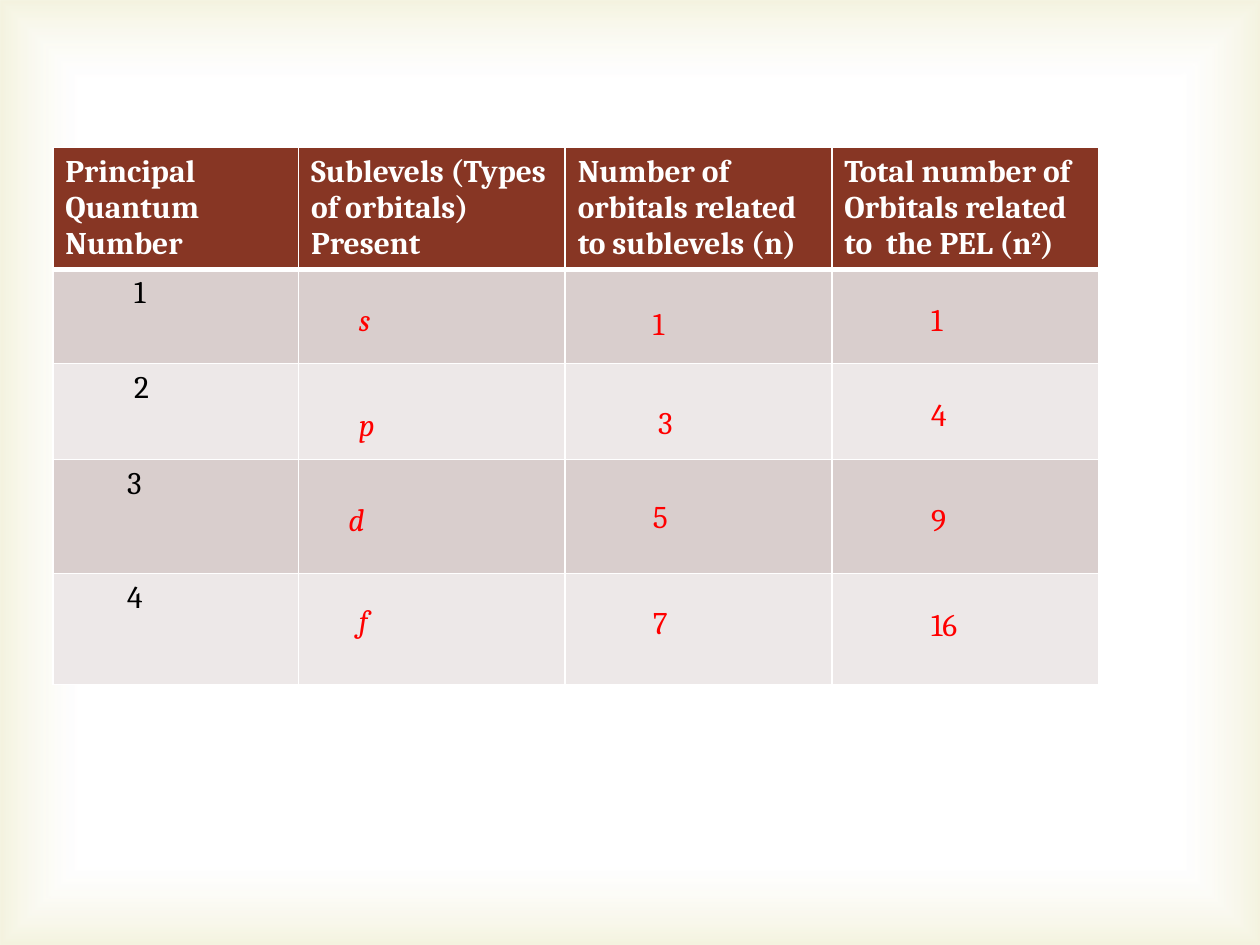
from lxml.etree import SubElement
from pptx import Presentation
from pptx.dml.color import RGBColor
from pptx.enum.shapes import MSO_SHAPE
from pptx.enum.text import MSO_AUTO_SIZE
from pptx.oxml import parse_xml
from pptx.oxml.ns import nsdecls, qn
from pptx.util import Pt

COLORS = {
    "white": "FFFFFF", "glow": "D1CA75", "header": "873624",
    "odd": "D9CECD", "even": "EDE8E8", "black": "000000", "red": "FF0000",
}


def add_run(p, text, color, bold=False, italic=False):
    r = p.add_run()
    r.text = text
    r.font.name = "Cambria"
    r.font.size = Pt(18)
    r.font.bold = bold
    r.font.italic = italic
    r.font.color.rgb = RGBColor.from_string(COLORS[color])
    return r


def style_cell(cell, fill, top, bottom):
    tcPr = cell._tc.get_or_add_tcPr()
    for side, width in (("L", 1), ("R", 1), ("T", top), ("B", bottom)):
        ln = SubElement(tcPr, qn(f"a:ln{side}"), w=str(Pt(width)))
        solid = SubElement(ln, qn("a:solidFill"))
        SubElement(solid, qn("a:srgbClr"), val=COLORS["white"])
    cell.fill.solid()
    cell.fill.fore_color.rgb = RGBColor.from_string(COLORS[fill])


prs = Presentation()
prs.slide_width, prs.slide_height = Pt(720), Pt(540)
s = prs.slides.add_slide(prs.slide_layouts[6])
s.background.fill.solid()
s.background.fill.fore_color.rgb = RGBColor.from_string(COLORS["white"])

sp = s.shapes.add_shape(MSO_SHAPE.RECTANGLE, 0, 0, Pt(720), Pt(540))
sp.shadow.inherit = False
sp.line.fill.background()
grad = parse_xml(
    f'<a:gradFill {nsdecls("a")} rotWithShape="1"><a:gsLst>'
    f'<a:gs pos="83000"><a:srgbClr val="{COLORS["white"]}"><a:alpha val="11000"/></a:srgbClr></a:gs>'
    f'<a:gs pos="100000"><a:srgbClr val="{COLORS["glow"]}"><a:alpha val="23000"/></a:srgbClr></a:gs>'
    '</a:gsLst><a:path path="rect"><a:fillToRect l="50000" t="50000" r="50000" b="50000"/>'
    '</a:path></a:gradFill>'
)
sp._element.spPr.find(qn("a:prstGeom")).addnext(grad)

widths = [140.4, 152.4, 152.4, 152.4]
heights = [69, 53.8, 55, 65.2, 63.4]
headers = [
    "Principal Quantum Number",
    "Sublevels (Types of orbitals) Present",
    "Number of orbitals related to sublevels (n)",
    "Total number of Orbitals related to  the PEL (n",
]
table = s.shapes.add_table(5, 4, Pt(30.2), Pt(84.3), Pt(sum(widths)), Pt(sum(heights))).table
for column, width in zip(table.columns, widths):
    column.width = Pt(width)
for row, height in zip(table.rows, heights):
    row.height = Pt(height)

for i in range(5):
    for j in range(4):
        fill = "header" if i == 0 else "odd" if i % 2 else "even"
        style_cell(table.cell(i, j), fill, 3 if i == 1 else 1, 3 if i == 0 else 1)

for j, header in enumerate(headers):
    add_run(table.cell(0, j).text_frame.paragraphs[0], header, "white", bold=True)
p = table.cell(0, 3).text_frame.paragraphs[0]
r = add_run(p, "2", "white", bold=True)
r.font._element.set("baseline", "30000")
add_run(p, ")", "white", bold=True)

for i, margin in enumerate([46.5, 46.5, 42.5, 42.5], 1):
    cell = table.cell(i, 0)
    cell.margin_left = Pt(margin)
    add_run(cell.text_frame.paragraphs[0], str(i), "black")

answers = [
    ("s", 198, 167.8, 48), ("1", 366, 170.4, 48), ("1", 525, 167.8, 66),
    ("p", 198, 228, 66), ("3", 369, 226.8, 72), ("4", 525, 222, 60),
    ("d", 192, 282, 66), ("5", 366, 280.2, 84), ("9", 525, 282, 60),
    ("f", 198, 340, 96), ("7", 366, 341.3, 78), ("16", 525, 342, 108),
]
for text, left, top, width in answers:
    tf = s.shapes.add_textbox(Pt(left), Pt(top), Pt(width), Pt(29)).text_frame
    tf.word_wrap = True
    tf.auto_size = MSO_AUTO_SIZE.SHAPE_TO_FIT_TEXT
    add_run(tf.paragraphs[0], text, "red", italic=text.isalpha())

prs.save("out.pptx")
